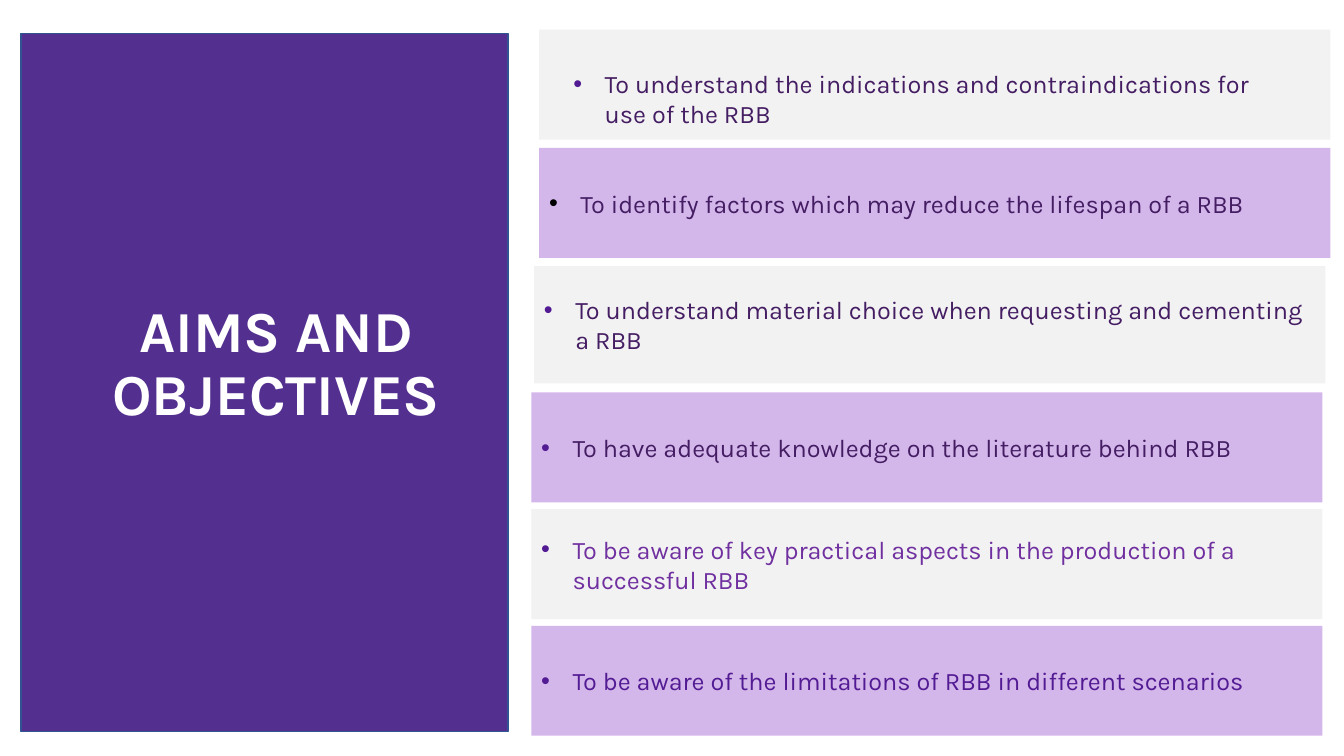
import pptx
import pptx.dml.color
import pptx.enum.shapes
import pptx.enum.text
import pptx.util
import lxml.etree
from pptx.oxml.ns import qn

Cm = pptx.util.Cm
Pt = pptx.util.Pt

COLOURS = {
    "panel": "533090", "edge": "31538F", "white": "FFFFFF", "black": "000000",
    "grey": "F2F2F2", "lilac": "D3B6EA",
    "dark": "441D63", "violet": "521B93", "bright": "7030A0",
}


class SlideBuilder:
    """Holds the style and the current slide."""

    font = "Karla"
    body_size = 18
    title_size = 41.4
    inset = 0.25
    indent = 0.79

    def __init__(self, page):
        self.page = page

    def colour(self, name):
        return pptx.dml.color.RGBColor.from_string(COLOURS[name])

    def rectangle(self, place, fill, line=None):
        box = self.page.shapes.add_shape(
            pptx.enum.shapes.MSO_SHAPE.RECTANGLE, *map(Cm, place))
        box.shadow.inherit = False
        box.fill.solid()
        box.fill.fore_color.rgb = self.colour(fill)
        if line:
            box.line.color.rgb = self.colour(line)
            box.line.width = Pt(1)
        else:
            box.line.fill.background()
        return box

    def text_box(self, place):
        return self.page.shapes.add_textbox(*map(Cm, place))

    def set_text(self, box, text, size, colour, anchor, align, inset_y, bold=False):
        frame = box.text_frame
        frame.text = text
        frame.word_wrap = True
        frame.vertical_anchor = anchor
        frame.margin_left = frame.margin_right = Cm(self.inset)
        frame.margin_top = frame.margin_bottom = Cm(inset_y)
        para = frame.paragraphs[0]
        para.alignment = align
        span = para.runs[0]
        span.font.name = self.font
        span.font.size = Pt(size)
        span.font.bold = bold
        span.font.color.rgb = self.colour(colour)
        return para

    def title(self, place, text):
        para = self.set_text(self.text_box(place), text, self.title_size, "white",
                             pptx.enum.text.MSO_ANCHOR.TOP,
                             pptx.enum.text.PP_ALIGN.CENTER, 0.13, bold=True)
        para.line_spacing = 0.9

    def bullet(self, box, text, colour, bullet_colour, anchor):
        para = self.set_text(box, text, self.body_size, colour, anchor,
                             pptx.enum.text.PP_ALIGN.LEFT, self.inset)
        props = para._p.get_or_add_pPr()
        props.set("marL", str(Cm(self.indent)))
        props.set("indent", str(-Cm(self.indent)))
        tint = lxml.etree.SubElement(props, qn("a:buClr"))
        lxml.etree.SubElement(tint, qn("a:srgbClr"), val=COLOURS[bullet_colour])
        lxml.etree.SubElement(props, qn("a:buFont"), typeface="Arial")
        lxml.etree.SubElement(props, qn("a:buChar"), char="•")


# Left, top, height, text, text colour, bullet colour
OBJECTIVES = [
    (13.59, 0.75, 2.77, "To understand the indications and contraindications for "
     "use of the RBB", "dark", "violet"),
    (13.59, 3.73, 2.77, "To identify factors which may reduce the lifespan of a RBB",
     "dark", "black"),
    (13.46, 6.71, 2.95, "To understand material choice when requesting and "
     "cementing a RBB", "dark", "violet"),
    (13.39, 9.89, 2.77, "To have adequate knowledge on the literature behind RBB",
     "dark", "violet"),
    (13.39, 12.83, 2.77, "To be aware of key practical aspects in the production "
     "of a successful RBB", "bright", "violet"),
    (13.39, 15.77, 2.77, "To be aware of the limitations of RBB in different "
     "scenarios", "violet", "violet"),
]
BAND_WIDTH = 19.94


def main():
    deck = pptx.Presentation()
    deck.slide_width, deck.slide_height = Cm(33.87), Cm(19.05)
    builder = SlideBuilder(deck.slides.add_slide(deck.slide_layouts[6]))

    # Title panel
    builder.rectangle((0.53, 0.84, 12.27, 17.6), "panel", "edge")
    builder.title((1.65, 7.49, 10.62, 4.04), "AIMS AND OBJECTIVES")

    # Objective bands in alternating colours
    for number, (left, top, height, text, colour, dot) in enumerate(OBJECTIVES):
        fill = "lilac" if number % 2 else "grey"
        box = builder.rectangle((left, top, BAND_WIDTH, height), fill)
        anchor = pptx.enum.text.MSO_ANCHOR.MIDDLE
        if number == 0:  # the first text sits in its own box, lower in the band
            box = builder.text_box((14.2, 1.47, 18.34, 2.06))
            anchor = pptx.enum.text.MSO_ANCHOR.TOP
        builder.bullet(box, text, colour, dot, anchor)

    deck.save("out.pptx")


if __name__ == "__main__":
    main()
